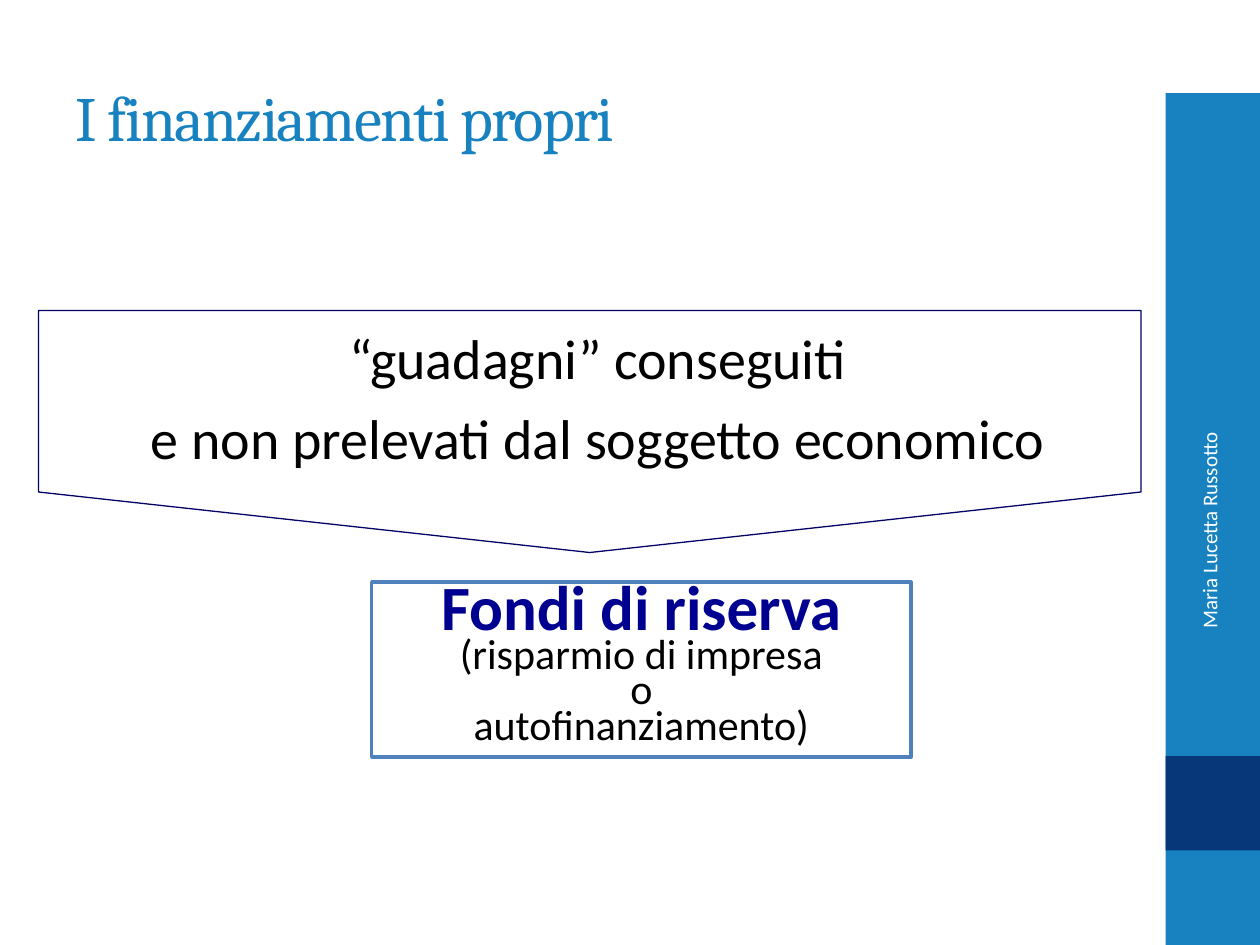
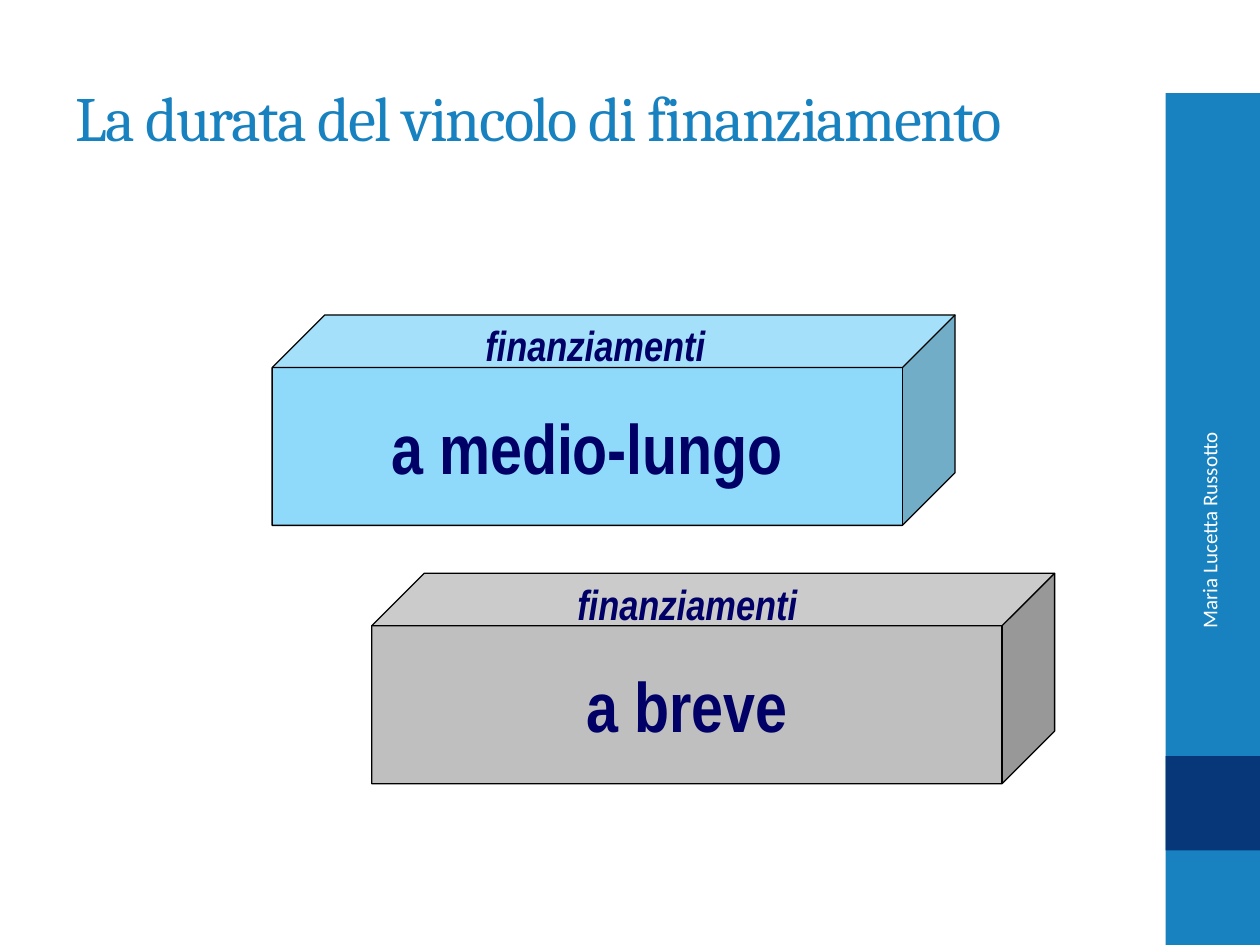
from dataclasses import dataclass, field
from typing import Any, Optional

from pptx import Presentation
from pptx import util as u
from pptx.dml import color as c
from pptx.enum import shapes, text

BLUE = c.RGBColor(0x17, 0x82, 0xBF)
DARK = c.RGBColor(0x07, 0x37, 0x79)
NAVY = c.RGBColor(0x00, 0x00, 0x66)
INK = c.RGBColor(0x00, 0x00, 0x90)
STEEL = c.RGBColor(0x4F, 0x81, 0xBD)
SKY = c.RGBColor(0x8F, 0xD9, 0xFB)
GREY = c.RGBColor(0xBF, 0xBF, 0xBF)
BLACK = c.RGBColor(0x00, 0x00, 0x00)
WHITE = c.RGBColor(0xFF, 0xFF, 0xFF)

KIND = shapes.MSO_SHAPE
ALIGN = text.PP_ALIGN
TOP = text.MSO_ANCHOR.TOP
MID = text.MSO_ANCHOR.MIDDLE
GROW = text.MSO_AUTO_SIZE.SHAPE_TO_FIT_TEXT
FIXED = text.MSO_AUTO_SIZE.NONE

HEAD = dict(name="Cambria", size=u.Pt(36), color=BLUE)
NAME = dict(name="Calibri", size=u.Pt(12), color=WHITE)
BODY = dict(name="Calibri", size=u.Pt(32), color=BLACK)
FUND = dict(name="Calibri", size=u.Pt(36), color=INK, bold=True)
NOTE = dict(name="Calibri", size=u.Pt(24), color=BLACK)
TERM = dict(name="Arial Narrow", size=u.Pt(40), color=NAVY, bold=True)
LABEL = dict(TERM, size=u.Pt(24), italic=True)


@dataclass(frozen=True)
class Line:
    words: str
    style: dict[str, Any]
    track: int = 0


@dataclass(frozen=True)
class Item:
    box: tuple[float, float, float, float]
    lines: tuple[Line, ...] = ()
    kind: Optional[KIND] = None
    bend: Optional[float] = None
    fill: Optional[c.RGBColor] = None
    edge: Optional[c.RGBColor] = None
    weight: float = 0.75
    turn: float = 0
    align: ALIGN = ALIGN.CENTER
    space: Optional[float] = None
    frame: dict[str, Any] = field(default_factory=dict)


@dataclass(frozen=True)
class Block:
    words: str
    left: float
    top: float
    fill: c.RGBColor
    shift: float


LOOSE = dict(word_wrap=False, auto_size=GROW, vertical_anchor=TOP)
SOLID = dict(word_wrap=False, auto_size=FIXED, vertical_anchor=MID)
WRAP = dict(word_wrap=True, auto_size=FIXED, vertical_anchor=MID)

BANDS = (
    Item((666, 53.28, 54, 486.72), kind=KIND.RECTANGLE, fill=BLUE),
    Item((666, 432, 54, 54), kind=KIND.RECTANGLE, fill=DARK),
)
AUTHOR = Item((597.6, 318.96, 186.48, 28.8), (Line("Maria Lucetta Russotto", NAME),),
              turn=270, align=ALIGN.RIGHT, frame=WRAP)

PROFIT = (
    Item((267.84, -68.4, 138.24, 630), kind=KIND.PENTAGON, bend=0.25, edge=NAVY,
         turn=90),
    Item((75.6, 173.52, 532.08, 99.36),
         (Line("“guadagni” conseguiti", BODY),
          Line("e non prelevati dal soggetto economico", BODY)),
         space=1.2, frame=LOOSE),
)
FUNDS = Item((212.4, 332.64, 308.16, 100.08),
             (Line("Fondi di riserva", FUND), Line("(risparmio di impresa", NOTE),
              Line("o", NOTE), Line("autofinanziamento)", NOTE)),
             kind=KIND.RECTANGLE, fill=WHITE, edge=STEEL, weight=2, space=0.7,
             frame=dict(LOOSE, word_wrap=True))

BLOCKS = (
    Block("a medio-lungo", 155.52, 180, SKY, 114.48),
    Block("a breve", 212.4, 327.6, GREY, 110.16),
)


def paint(shape: Any, item: Item) -> None:
    shape.shadow.inherit = False
    if item.bend is not None:
        shape.adjustments[0] = item.bend
    if item.fill is None:
        shape.fill.background()
    else:
        shape.fill.solid()
        shape.fill.fore_color.rgb = item.fill
    if item.edge is None:
        shape.line.fill.background()
    else:
        shape.line.color.rgb = item.edge
        shape.line.width = u.Pt(item.weight)


def write(shape: Any, item: Item) -> None:
    frame = shape.text_frame
    for key, value in item.frame.items():
        setattr(frame, key, value)
    for i, line in enumerate(item.lines):
        para = frame.add_paragraph() if i else frame.paragraphs[0]
        para.alignment = item.align
        if item.space:
            para.line_spacing = item.space
        run = para.add_run()
        run.text = line.words
        for key, value in line.style.items():
            if key == "color":
                run.font.color.rgb = value
            else:
                setattr(run.font, key, value)
        if line.track:
            run._r.get_or_add_rPr().set("spc", str(line.track))


def draw(tree: Any, item: Item) -> None:
    box = [u.Pt(n) for n in item.box]
    if item.kind is None:
        shape = tree.add_textbox(*box)
    else:
        shape = tree.add_shape(item.kind, *box)
        paint(shape, item)
    shape.rotation = item.turn
    if item.lines:
        write(shape, item)


def pack(slide: Any, items: tuple[Item, ...]) -> None:
    group = slide.shapes.add_group_shape()
    for item in items:
        draw(group.shapes, item)


def stack(block: Block) -> tuple[Item, ...]:
    cube = Item((block.left, block.top, 390.24, 120.24), (Line(block.words, TERM),),
                kind=KIND.CUBE, bend=0.25, fill=block.fill, edge=BLACK, frame=SOLID)
    label = Item((block.left + block.shift, block.top - 0.72, 140.4, 36),
                 (Line("finanziamenti", LABEL),), frame=LOOSE)
    return cube, label


def start(deck: Any, title: str) -> Any:
    slide = deck.slides.add_slide(deck.slide_layouts[6])
    head = Item((36, 21.6, 600, 90), (Line(title, HEAD, -100),),
                align=ALIGN.LEFT, frame=WRAP)
    for item in (*BANDS, head):
        draw(slide.shapes, item)
    return slide


def main() -> None:
    deck = Presentation()
    deck.slide_width, deck.slide_height = u.Pt(720), u.Pt(540)

    own = start(deck, "I finanziamenti propri")
    pack(own, PROFIT)
    draw(own.shapes, FUNDS)

    term = start(deck, "La durata del vincolo di finanziamento")
    for block in BLOCKS:
        pack(term, stack(block))

    for slide in (own, term):
        draw(slide.shapes, AUTHOR)
    deck.save("out.pptx")


if __name__ == "__main__":
    main()
